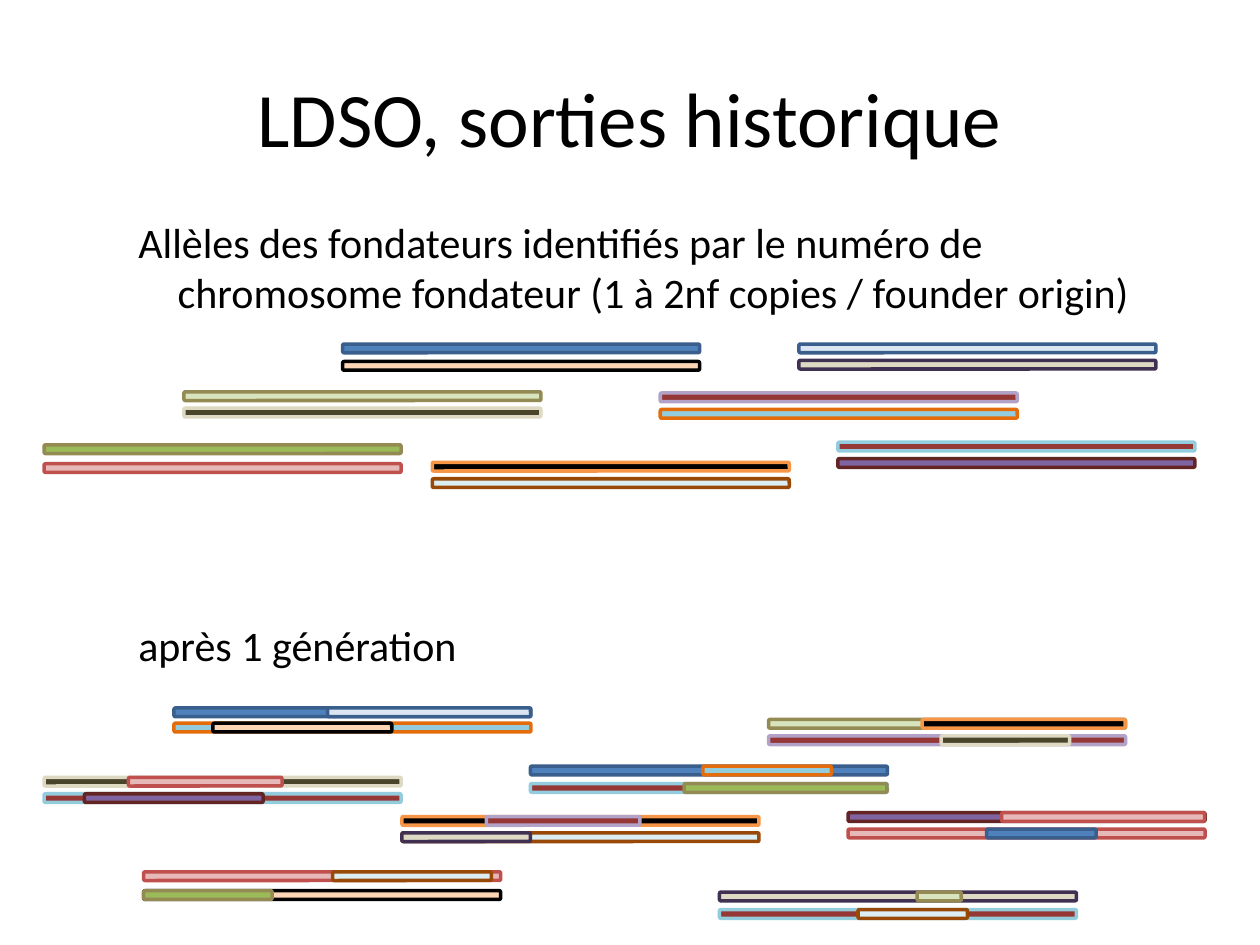
from pptx import Presentation
from pptx.dml.color import RGBColor
from pptx.enum.shapes import MSO_SHAPE
from pptx.enum.text import MSO_ANCHOR, PP_ALIGN
from pptx.util import Pt

ROUNDED = MSO_SHAPE.ROUNDED_RECTANGLE
TOP, MIDDLE = MSO_ANCHOR.TOP, MSO_ANCHOR.MIDDLE
LEFT, CENTER = PP_ALIGN.LEFT, PP_ALIGN.CENTER

CHROMOSOME_LENGTH = 204
CHROMOSOME_HEIGHT = 5

# Founder chromosome number: (fill, outline)
FOUNDER_COLORS = {
    1: ("4F81BD", "3A5F8C"),
    2: ("FCD5B5", "000000"),
    3: ("DCE6F2", "3A5F8C"),
    4: ("DDD9C3", "403152"),
    5: ("D7E4BD", "948A54"),
    6: ("4A452A", "DDD9C3"),
    7: ("953735", "B3A2C7"),
    8: ("93CDDD", "E46C0A"),
    9: ("9BBB59", "948A54"),
    10: ("E6B9B8", "C0504D"),
    11: ("000000", "F79646"),
    12: ("DBEEF4", "984807"),
    13: ("953735", "93CDDD"),
    14: ("8064A2", "632523"),
}

# Left and the two tops of each founder; its chromosomes are numbered in order
FOUNDERS = [
    (195.8, 196.6, 206.6),
    (456.5, 196.6, 205.9),
    (105.1, 223.9, 233.3),
    (377.3, 224.6, 234),
    (25.2, 254.2, 265),
    (247, 264.2, 273.6),
    (478.8, 252.7, 262.1),
]

# Left, then per chromosome: top, main origin, recombined origin, start, length
DESCENDANTS = [
    (99.4, (404.6, 1, 3, 87.8, 116), (413.3, 8, 2, 22.3, 102.2)),
    (439.2, (411.1, 5, 11, 87.8, 116), (420.5, 7, 6, 98.6, 73.4)),
    (25.2, (444.2, 6, 10, 48.2, 87.8), (453.6, 13, 14, 23, 102.2)),
    (303.1, (437.8, 1, 8, 98.6, 73.4), (447.8, 13, 9, 87.8, 116)),
    (229.7, (466.6, 11, 7, 48.2, 87.8), (475.9, 12, 4, 0, 73.4)),
    (484.6, (464.4, 14, 10, 87.8, 116), (473.8, 10, 1, 79.2, 62.6)),
    (82.1, (498.2, 10, 12, 108, 90.7), (509, 2, 9, 0, 73.4)),
    (411.1, (509.8, 4, 5, 113, 25.2), (519.8, 13, 12, 79.2, 62.6)),
]


def color(hex_string):
    return RGBColor.from_string(hex_string)


class SlideBuilder:
    font = "Calibri"
    text_color = "000000"
    outline_width = 2

    def __init__(self, slide):
        self.slide = slide

    def text_frame(self, left, top, width, height, anchor=TOP):
        box = self.slide.shapes.add_textbox(Pt(left), Pt(top), Pt(width), Pt(height))
        frame = box.text_frame
        frame.word_wrap = True
        frame.vertical_anchor = anchor
        return frame

    def paragraph(self, paragraph, text, size, align=LEFT, before=0, margin=0, indent=0):
        paragraph.alignment = align
        paragraph.space_before = Pt(before)
        properties = paragraph._p.get_or_add_pPr()
        properties.set("marL", str(Pt(margin)))
        properties.set("indent", str(Pt(indent)))
        run = paragraph.add_run()
        run.text = text
        run.font.name = self.font
        run.font.size = Pt(size)
        run.font.color.rgb = color(self.text_color)

    def segment(self, origin, left, top, length=CHROMOSOME_LENGTH):
        """Draw a stretch of chromosome in the colours of its founder origin."""
        fill, outline = FOUNDER_COLORS[origin]
        bar = self.slide.shapes.add_shape(
            ROUNDED, Pt(left), Pt(top), Pt(length), Pt(CHROMOSOME_HEIGHT))
        bar.shadow.inherit = False
        bar.fill.solid()
        bar.fill.fore_color.rgb = color(fill)
        bar.line.color.rgb = color(outline)
        bar.line.width = Pt(self.outline_width)


def main():
    presentation = Presentation()
    presentation.slide_width = Pt(720)
    presentation.slide_height = Pt(540)
    builder = SlideBuilder(presentation.slides.add_slide(presentation.slide_layouts[6]))

    title = builder.text_frame(36, 21.6, 648, 90, MIDDLE)
    builder.paragraph(title.paragraphs[0], "LDSO, sorties historique", 44, CENTER)

    body = builder.text_frame(36, 120.2, 648, 370.8)
    hanging = {"margin": 58.5, "indent": -22.5}
    builder.paragraph(
        body.paragraphs[0],
        "Allèles des fondateurs identifiés par le numéro de chromosome "
        "fondateur (1 à 2nf copies / founder origin)", 24, **hanging)
    builder.paragraph(
        body.add_paragraph(), "après 1 génération", 24, before=172.4, **hanging)

    for index, (left, *tops) in enumerate(FOUNDERS):
        for origin, top in enumerate(tops, start=2 * index + 1):
            builder.segment(origin, left, top)

    for left, *chromosomes in DESCENDANTS:
        for top, main_origin, recombined, start, length in chromosomes:
            builder.segment(main_origin, left, top)
            builder.segment(recombined, left + start, top, length)

    presentation.save("out.pptx")


if __name__ == "__main__":
    main()
